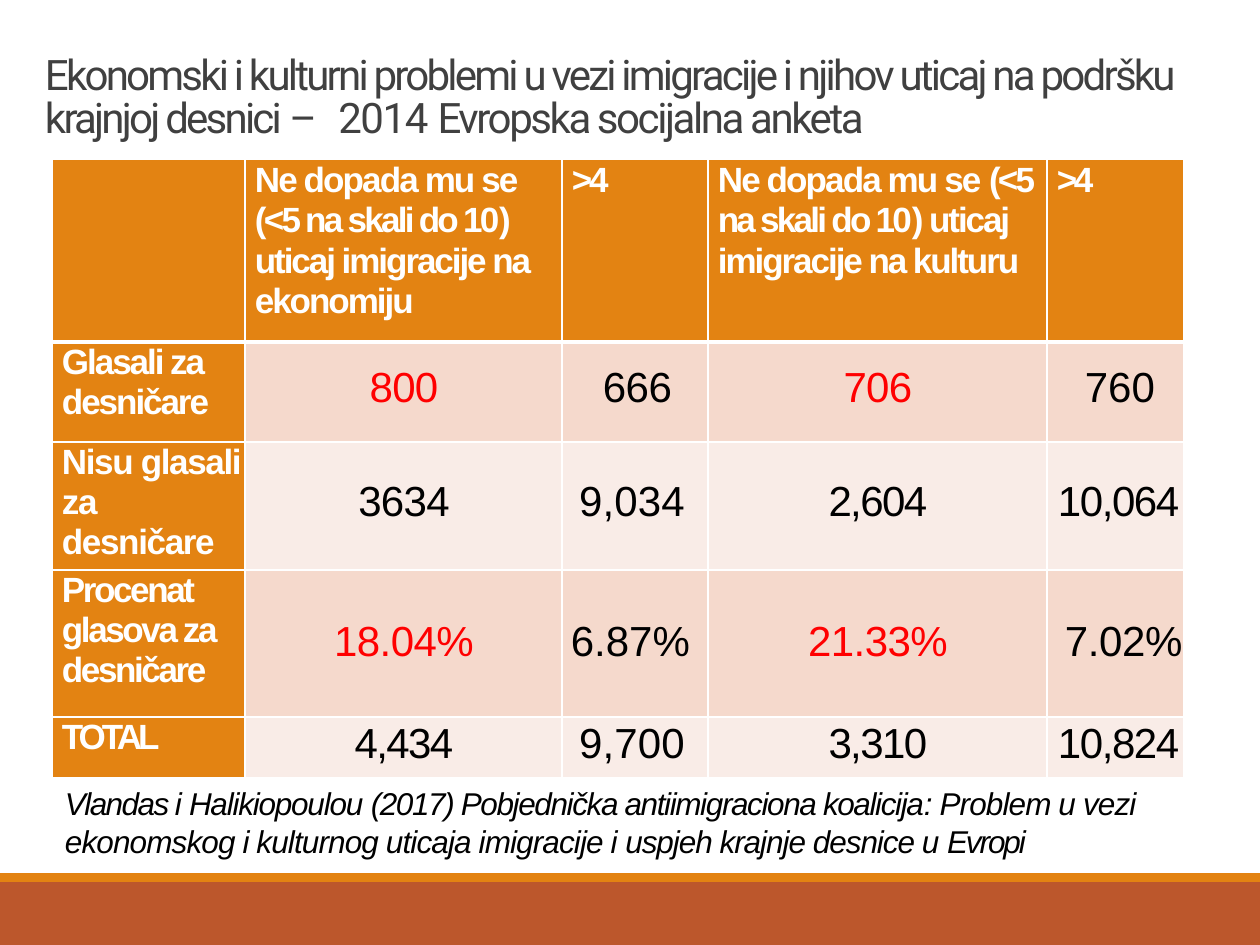
from lxml.etree import SubElement
from pptx import Presentation
from pptx.dml.color import RGBColor
from pptx.enum.shapes import MSO_SHAPE as Shape
from pptx.enum.text import MSO_ANCHOR as Anchor, MSO_AUTO_SIZE as AutoSize, PP_ALIGN as Align
from pptx.oxml.ns import qn
from pptx.util import Pt

EMU_PER_PX = 914400 / 126

WHITE = RGBColor(0xFF, 0xFF, 0xFF)
BLACK = RGBColor(0, 0, 0)
RED = RGBColor(0xFF, 0, 0)
GREY = RGBColor(0x40, 0x40, 0x40)
ORANGE = RGBColor(0xE3, 0x83, 0x12)
RUST = RGBColor(0xBC, 0x57, 0x2C)
PINK = RGBColor(0xF5, 0xD9, 0xCC)
PALE = RGBColor(0xF9, 0xEC, 0xE7)


def px(length):
    return round(length * EMU_PER_PX)


class SlideBuilder:
    def __init__(self, deck):
        self.slide = deck.slides.add_slide(deck.slide_layouts[5])

    def bar(self, x, y, width, height, colour):
        bar = self.slide.shapes.add_shape(Shape.RECTANGLE, px(x), px(y), px(width), px(height))
        bar.shadow.inherit = False
        bar.fill.solid()
        bar.fill.fore_color.rgb = colour
        bar.line.fill.background()

    def add_runs(self, frame, runs, size, colour, font="Arial", bold=False, italic=False,
                 align=Align.LEFT, leading=None):
        """Fill the first paragraph with (text, letter spacing in points) runs."""
        para = frame.paragraphs[0]
        para.alignment = align
        para.space_before = Pt(0)
        if leading:
            para.line_spacing = Pt(leading)
        for text, spacing in runs:
            span = para.add_run()
            span.text = text
            span.font.name = font
            span.font.size = Pt(size)
            span.font.bold = bold
            span.font.italic = italic
            span.font.color.rgb = colour
            span._r.get_or_add_rPr().set("spc", str(round(spacing * 100)))

    def frame(self, box, top):
        frame = box.text_frame
        frame.word_wrap = True
        frame.auto_size = AutoSize.NONE
        frame.vertical_anchor = Anchor.TOP
        frame.margin_left = px(1)
        frame.margin_right = frame.margin_bottom = 0
        frame.margin_top = px(top)
        return frame

    def title(self, x, y, width, height, runs):
        box = self.slide.shapes.title
        box.left, box.top, box.width, box.height = px(x), px(y), px(width), px(height)
        self.add_runs(self.frame(box, 9), runs, 24, GREY, font="Roboto", leading=24.5)

    def text(self, x, y, width, height, runs):
        box = self.slide.shapes.add_textbox(px(x), px(y), px(width), px(height))
        self.add_runs(self.frame(box, 1), runs, 18, BLACK, italic=True)

    def table(self, x, y, widths, heights):
        shape = self.slide.shapes.add_table(len(heights), len(widths), px(x), px(y),
                                            px(sum(widths)), px(sum(heights)))
        for column, width in zip(shape.table.columns, widths):
            column.width = px(width)
        for row, height in zip(shape.table.rows, heights):
            row.height = px(height)
        return shape.table

    def cell(self, cell, runs, fill, size, colour, left=0, top=0, right=0, borders=(1, 1), **style):
        cell.margin_left, cell.margin_top = px(left), px(top)
        cell.margin_right, cell.margin_bottom = px(right), 0
        cell.vertical_anchor = Anchor.TOP
        above, below = borders
        properties = cell._tc.get_or_add_tcPr()
        for side, width in (("lnL", 1), ("lnR", 1), ("lnT", above), ("lnB", below)):
            line = SubElement(properties, qn(f"a:{side}"), w=str(int(Pt(width))))
            SubElement(SubElement(line, qn("a:solidFill")), qn("a:srgbClr"), val=str(WHITE))
        cell.fill.solid()
        cell.fill.fore_color.rgb = fill
        self.add_runs(cell.text_frame, runs, size, colour, **style)


def impact_heading(area):
    return [("Ne dopada mu se ", -1.1), ("(<5 na skali do 10", -1.6),
            (f") uticaj imigracije na {area}", -1.2)]


OVER_FOUR = [(">4", -1.9)]
HEADINGS = [[], impact_heading("ekonomiju"), OVER_FOUR, impact_heading("kulturu"), OVER_FOUR]

# Row label and spacing, top inset, fill, accent colour, placing of the first
# ">4" column, left inset of the second one, then (value, spacing)
ROWS = [
    ("Glasali za desničare", -1.2, 23, PINK, RED, (Align.LEFT, 41, 0), 38,
     [("800", -0.4), ("666", -0.3), ("706", -0.4), ("760", 0)]),
    ("Nisu glasali za desničare", -0.8, 37, PALE, BLACK, (Align.RIGHT, 0, 23), 11,
     [("3634", -0.4), ("9,034", 0.1), ("2,604", -0.9), ("10,064", -0.8)]),
    ("Procenat glasova za desničare", -1.4, 49, PINK, RED, (Align.RIGHT, 0, 18), 18,
     [("18.04%", -0.3), ("6.87%", 0), ("21.33%", -0.3), ("7.02%", -0.2)]),
    ("TOTAL", -2.3, 4, PALE, BLACK, (Align.RIGHT, 0, 23), 11,
     [("4,434", -0.9), ("9,700", 0.1), ("3,310", -0.9), ("10,824", -0.8)]),
]


def main():
    deck = Presentation()
    deck.slide_width, deck.slide_height = px(1260), px(945)
    page = SlideBuilder(deck)

    # Footer bands
    page.bar(0, 882, 1260, 63, RUST)
    page.bar(0, 873, 1260, 9, ORANGE)

    page.title(44, 47, 1184, 97, [
        ("Ekonomski i kulturni problemi u vezi imigracije i njihov uticaj na podršku "
         "krajnjoj desnici ", -1.6),
        ("– ", 3.1), ("2014 ", -0.8), ("Evropska socijalna anketa", -1.4)])

    # Survey table: heading row
    table = page.table(52, 159, [193, 317, 146, 339, 137], [183, 100, 128, 147, 61])
    for column, runs in enumerate(HEADINGS):
        page.cell(table.cell(0, column), runs, ORANGE, 20, WHITE, left=10,
                  borders=(1, 3), bold=True, leading=23.2)

    # Survey table: labels and numbers
    for row, (label, spacing, top, fill, accent, middle, last_left, values) in enumerate(ROWS, 1):
        borders = (3 if row == 1 else 1, 1)
        page.cell(table.cell(row, 0), [(label, spacing)], ORANGE, 20, WHITE, left=10,
                  borders=borders, bold=True, leading=22.9)
        centred = (Align.CENTER, 1, 0)
        places = [centred, middle, centred, (Align.LEFT, last_left, 0)]
        colours = [accent, BLACK, accent, BLACK]
        for column, (value, place, colour) in enumerate(zip(values, places, colours), 1):
            align, left, right = place
            page.cell(table.cell(row, column), [value], fill, 24, colour, left=left, top=top,
                      right=right, borders=borders, align=align)

    # Citation
    page.text(64, 783, 1134, 78, [
        ("Vlandas i ", -0.9), ("Halikiopoulou ", -0.7),
        ("(2017) Pobjednička antiimigraciona koalicija", -0.8),
        (": Problem u vezi ekonomskog i kulturnog uticaja imigracije i ", -0.5),
        ("uspjeh krajnje desnice u ", -0.6), ("Evropi", -1.2)])

    deck.save("out.pptx")


if __name__ == "__main__":
    main()
